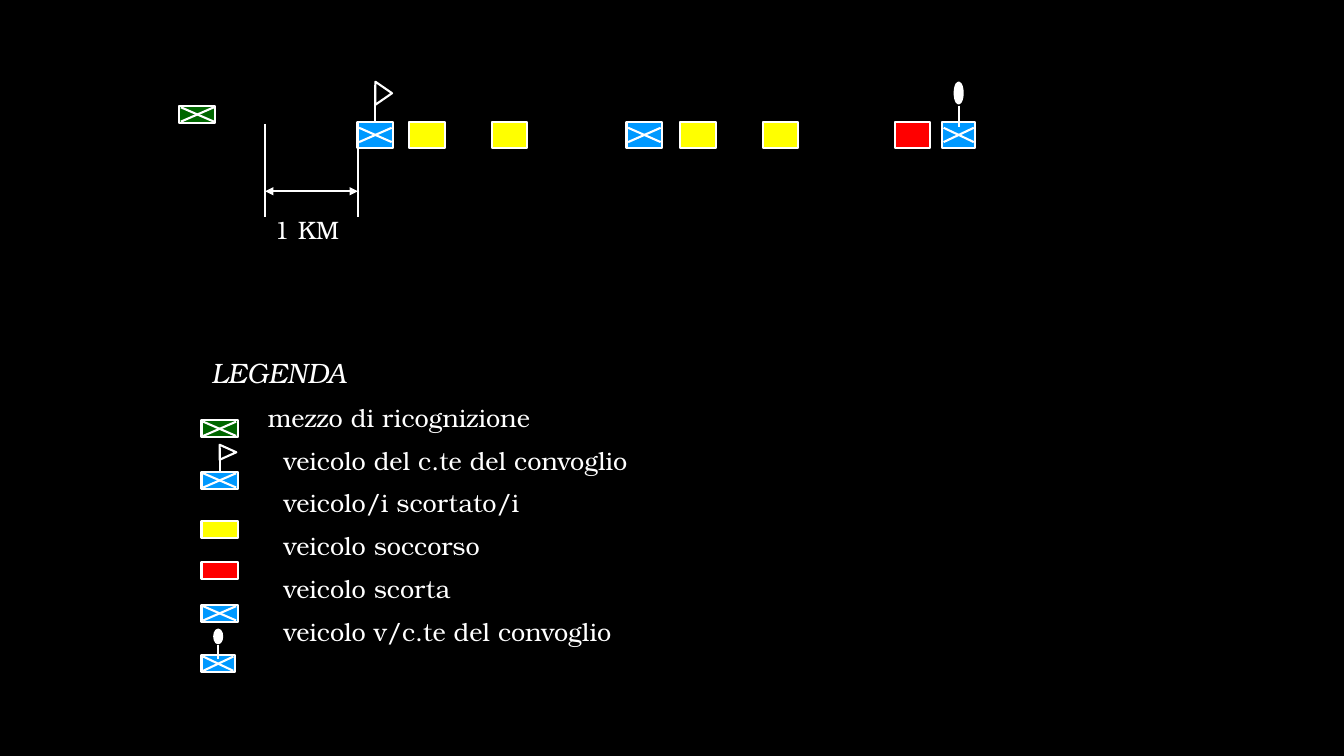
from lxml import etree
from pptx import Presentation
from pptx import util as u
from pptx.dml.color import RGBColor
from pptx.enum import shapes, text
from pptx.oxml import ns

BLACK = RGBColor(0x00, 0x00, 0x00)
WHITE = RGBColor(0xFF, 0xFF, 0xFF)
GREEN = RGBColor(0x00, 0x66, 0x00)
YELLOW = RGBColor(0xFF, 0xFF, 0x00)
RED = RGBColor(0xFF, 0x00, 0x00)
BLUE = RGBColor(0x00, 0x99, 0xFF)
FONT = "TeX Gyre Bonum"
STROKE = u.Pt(1.5)


def add_figure(slide, preset, left, top, width, height, fill=None):
    shape = slide.shapes.add_shape(
        preset, u.Cm(left), u.Cm(top), u.Cm(width), u.Cm(height))
    shape.shadow.inherit = False
    if fill is None:
        shape.fill.background()
    else:
        shape.fill.solid()
        shape.fill.fore_color.rgb = fill
    shape.line.color.rgb = WHITE
    shape.line.width = STROKE
    return shape


def add_line(slide, x1, y1, x2, y2, arrows=False):
    connector = slide.shapes.add_connector(
        shapes.MSO_CONNECTOR.STRAIGHT, u.Cm(x1), u.Cm(y1), u.Cm(x2), u.Cm(y2))
    connector.line.color.rgb = WHITE
    connector.line.width = STROKE
    if arrows:
        outline = connector.line._get_or_add_ln()
        for end in ("a:headEnd", "a:tailEnd"):
            etree.SubElement(outline, ns.qn(end), type="triangle")
    etree.SubElement(connector._element.spPr, ns.qn("a:effectLst"))


def add_text(slide, left, top, width, height):
    frame = slide.shapes.add_textbox(
        u.Cm(left), u.Cm(top), u.Cm(width), u.Cm(height)).text_frame
    frame.word_wrap = True
    frame.auto_size = text.MSO_AUTO_SIZE.SHAPE_TO_FIT_TEXT
    return frame


def write(paragraph, words, size=18, italic=False):
    paragraph.text = words
    font = paragraph.runs[0].font
    font.name = FONT
    font.size = u.Pt(size)
    font.italic = italic
    font.color.rgb = WHITE


def add_cross(slide, left, top, width, height):
    middle = top + height / 2
    for rise in (-0.18, 0.18):
        add_line(slide, left + 0.04, middle + rise,
                 left + width - 0.04, middle - rise)


def add_flag(slide, x, top, scale):
    pole_top = top - 0.94 * scale
    add_line(slide, x, pole_top, x, top + 0.04)
    breadth, length = 0.58 * scale, 0.42
    pennant = add_figure(
        slide, shapes.MSO_SHAPE.ISOSCELES_TRIANGLE,
        x + (length - breadth) / 2,
        pole_top - 0.07 + (breadth - length) / 2, breadth, length)
    pennant.rotation = 90


def add_disc(slide, x, top, scale):
    add_line(slide, x, top - 0.41 * scale, x, top + 0.13 * scale)
    add_figure(slide, shapes.MSO_SHAPE.OVAL, x - 0.1, top - 0.99 * scale,
               0.2, 0.53 * scale, WHITE)


def add_vehicle(slide, left, top, width, height, fill, crossed=False, sign=None):
    add_figure(slide, shapes.MSO_SHAPE.RECTANGLE, left, top, width, height, fill)
    if crossed:
        add_cross(slide, left, top, width, height)
    if sign:
        sign(slide, left + width / 2, top, height / 0.66)


def add_convoy(slide, left, top, height):
    for offset, width, fill, crossed, sign in (
            (0, 0.9, BLUE, True, add_flag),
            (1.3, 0.9, YELLOW, False, None),
            (3.38, 0.9, YELLOW, False, None),
            (6.78, 0.9, BLUE, True, None),
            (8.13, 0.9, YELLOW, False, None),
            (10.21, 0.9, YELLOW, False, None),
            (13.54, 0.9, RED, False, None),
            (14.73, 0.84, BLUE, True, add_disc)):
        add_vehicle(slide, left + offset, top, width, height, fill, crossed, sign)


def add_distance(slide, left, top, width, height):
    right = left + width
    for x in (left, right):
        add_line(slide, x, top, x, top + height)
    add_line(slide, left, top + 1.7, right, top + 1.7, arrows=True)
    frame = add_text(slide, left - 0.02, top + 2.16, width + 0.02, 1.02)
    write(frame.paragraphs[0], "1 KM")


def add_legend(slide, left, top, width, height):
    entries = (
        ("mezzo di ricognizione", 1.42, 1.75, 0.91, GREEN, True, None),
        ("veicolo del c.te del convoglio", 1.82, 3.05, 0.91, BLUE, True, add_flag),
        ("veicolo/i scortato/i", 1.82, 4.29, 0.91, YELLOW, False, None),
        ("veicolo soccorso", 1.82, 5.33, 0.91, RED, False, None),
        ("veicolo scorta", 1.82, 6.4, 0.91, BLUE, True, None),
        ("veicolo v/c.te del convoglio", 1.82, 7.67, 0.84, BLUE, True, add_disc),
    )
    frame = add_text(slide, left, top, width, height)
    write(frame.paragraphs[0], "LEGENDA", 20, True)
    for words, indent, offset, breadth, fill, crossed, sign in entries:
        paragraph = frame.add_paragraph()
        write(paragraph, words)
        paragraph.space_before = u.Pt(9)
        paragraph._p.get_or_add_pPr().set("marL", str(u.Cm(indent)))
        add_vehicle(slide, left, top + offset, breadth, 0.43, fill, crossed, sign)


def main():
    presentation = Presentation()
    presentation.slide_width = u.Cm(33.87)
    presentation.slide_height = u.Cm(19.05)
    slide = presentation.slides.add_slide(presentation.slide_layouts[6])
    slide.background.fill.solid()
    slide.background.fill.fore_color.rgb = BLACK
    add_vehicle(slide, 4.52, 2.67, 0.91, 0.43, GREEN, True)
    add_convoy(slide, 9.01, 3.07, 0.66)
    add_distance(slide, 6.68, 3.12, 2.34, 2.34)
    add_legend(slide, 5.08, 8.84, 24.56, 8.03)
    presentation.save("out.pptx")


if __name__ == "__main__":
    main()
